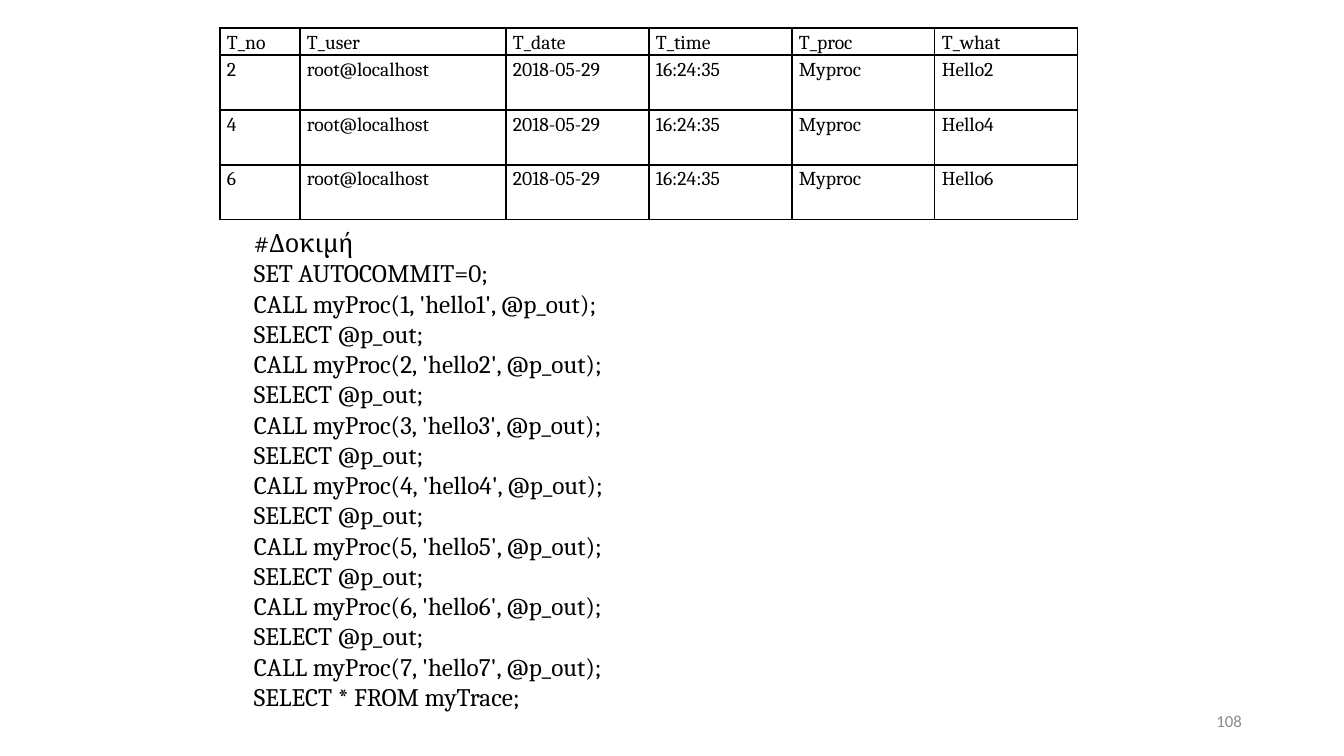
"""Build the slide with the trace table and the SQL test script."""
from dataclasses import dataclass

from lxml.etree import SubElement
from pptx import Presentation
from pptx.dml.color import RGBColor
from pptx.enum.text import MSO_ANCHOR as Anchor, MSO_AUTO_SIZE as AutoSize, PP_ALIGN as Align
from pptx.oxml.ns import qn
from pptx.util import Emu, Pt

HEADINGS = ("T_no", "T_user", "T_date", "T_time", "T_proc", "T_what")
TRACE_NUMBERS = (2, 4, 6)
TRACE_ROWS = [HEADINGS] + [
    (str(number), "root@localhost", "2018-05-29", "16:24:35", "Myproc", f"Hello{number}")
    for number in TRACE_NUMBERS
]
CALLS = [
    line
    for number in range(1, 8)
    for line in (f"CALL myProc({number}, 'hello{number}', @p_out);", "SELECT @p_out;")
]
SQL_LINES = ["#Δοκιμή", "SET AUTOCOMMIT=0;", *CALLS[:-1], "SELECT * FROM myTrace;"]
PAGE_NUMBER = "108"

SLIDE_SIZE = (1344, 756)
TABLE_ORIGIN = (220, 28)
COLUMN_WIDTHS = (80, 206, 143, 143, 143, 143)
ROW_HEIGHTS = (27, 55, 55, 55)
CELL_INSET = 7
SQL_BOX = (244, 220, 391, 499)
NUMBER_BOX = (950, 701, 302, 40)


@dataclass(frozen=True)
class Theme:
    """Colours, fonts and type sizes."""
    ink: str = "000000"
    muted: str = "8C8C8C"
    serif: str = "Cambria"
    sans: str = "Calibri"
    cell_size: int = 14
    sql_size: int = 18
    number_size: int = 12
    border: int = 1
    cell_spacing: float = 1.15


THEME = Theme()


def px(length):
    """Turn px into EMU."""
    return Emu(round(length * 914400 / 100.8))


def style(para, face, size, color):
    """Set the font of a whole paragraph."""
    para.font.name = face
    para.font.size = Pt(size)
    para.font.color.rgb = RGBColor.from_string(color)


def add_borders(cell):
    """Draw a solid line on each side of a cell."""
    properties = cell._tc.get_or_add_tcPr()
    for position, side in enumerate(("a:lnL", "a:lnR", "a:lnT", "a:lnB")):
        line = SubElement(properties, qn(side), w=str(Pt(THEME.border)))
        fill = SubElement(line, qn("a:solidFill"))
        SubElement(fill, qn("a:srgbClr"), val=THEME.ink)
        properties.insert(position, line)


def add_trace_table(page):
    """Add the bordered table of trace records."""
    size = (sum(COLUMN_WIDTHS), sum(ROW_HEIGHTS))
    frame = page.shapes.add_table(
        len(TRACE_ROWS), len(HEADINGS), *map(px, TABLE_ORIGIN + size))
    table = frame.table
    table.first_row = table.horz_banding = False
    for column, width in zip(table.columns, COLUMN_WIDTHS):
        column.width = px(width)
    for row, height, values in zip(table.rows, ROW_HEIGHTS, TRACE_ROWS):
        row.height = px(height)
        for cell, value in zip(row.cells, values):
            cell.text = value
            cell.margin_left = cell.margin_right = px(CELL_INSET)
            cell.margin_top = cell.margin_bottom = 0
            cell.fill.background()
            add_borders(cell)
            para = cell.text_frame.paragraphs[0]
            para.line_spacing = THEME.cell_spacing
            style(para, THEME.serif, THEME.cell_size, THEME.ink)


def add_text(page, bounds, lines, face, size, color, align=Align.LEFT):
    """Add a vertically centred text box, one paragraph a line."""
    box = page.shapes.add_textbox(*map(px, bounds))
    frame = box.text_frame
    frame.text = "\n".join(lines)
    frame.vertical_anchor = Anchor.MIDDLE
    for para in frame.paragraphs:
        para.alignment = align
        style(para, face, size, color)
    return frame


def main():
    """Assemble and save the deck."""
    deck = Presentation()
    deck.slide_width, deck.slide_height = map(px, SLIDE_SIZE)
    page = deck.slides.add_slide(deck.slide_layouts[6])
    add_trace_table(page)
    script = add_text(page, SQL_BOX, SQL_LINES, THEME.serif, THEME.sql_size, THEME.ink)
    script.word_wrap = False
    script.auto_size = AutoSize.SHAPE_TO_FIT_TEXT
    number = add_text(page, NUMBER_BOX, [PAGE_NUMBER], THEME.sans,
                      THEME.number_size, THEME.muted, Align.RIGHT)
    number.word_wrap = True
    deck.save("out.pptx")


if __name__ == "__main__":
    main()
